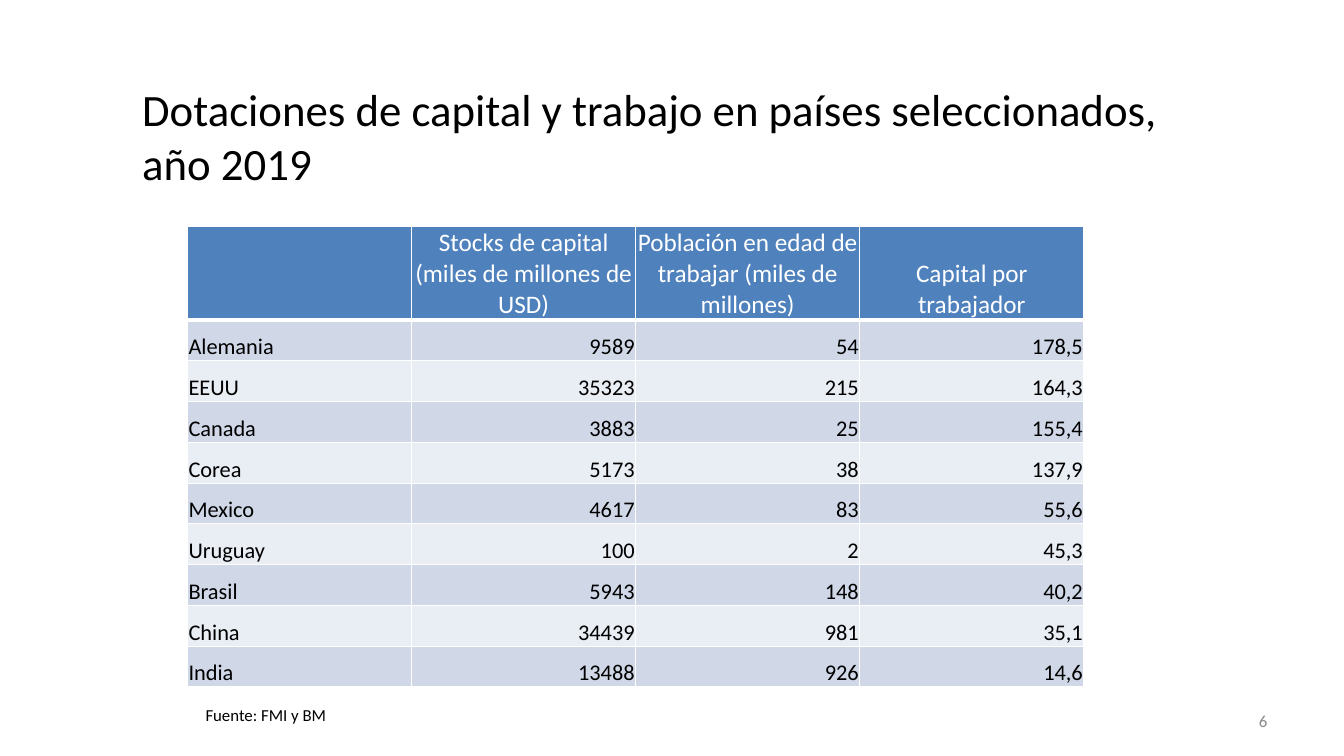
"""Build a slide with a table of capital and labour endowments by country."""
from lxml import etree
from pptx import Presentation
from pptx.dml.color import RGBColor
from pptx.enum.text import MSO_ANCHOR, MSO_AUTO_SIZE, PP_ALIGN
from pptx.oxml.ns import qn
from pptx.util import Inches, Pt

LEFT, MID, RIGHT = PP_ALIGN.LEFT, PP_ALIGN.CENTER, PP_ALIGN.RIGHT
TOP, CENTER, BASE = MSO_ANCHOR.TOP, MSO_ANCHOR.MIDDLE, MSO_ANCHOR.BOTTOM
FIXED = MSO_AUTO_SIZE.NONE

TITLE = "Dotaciones de capital y trabajo en países seleccionados, año 2019"
SOURCE = "Fuente: FMI y BM"
PAGE = "6"
HEAD = (
    "",
    "Stocks de capital (miles de millones de USD)",
    "Población en edad de trabajar (miles de millones)",
    "Capital por trabajador",
)
DATA = [
    ("Alemania", "9589", "54", "178,5"),
    ("EEUU", "35323", "215", "164,3"),
    ("Canada", "3883", "25", "155,4"),
    ("Corea", "5173", "38", "137,9"),
    ("Mexico", "4617", "83", "55,6"),
    ("Uruguay", "100", "2", "45,3"),
    ("Brasil", "5943", "148", "40,2"),
    ("China", "34439", "981", "35,1"),
    ("India", "13488", "926", "14,6"),
]

THEME = {
    "font": "Calibri",
    "ink": "000000", "white": "FFFFFF", "gray": "898989",
    "head": "4F81BD", "bands": ("D0D8E8", "E9EDF4"),
    "title": 32, "top": 18, "body": 16, "small": 12,
    "thin": 1, "thick": 3,
}
SIZE = (13.33, 7.5)
GRID = (1.86, 2.25, 8.89, 4.56)
HEAD_H = 0.92
INSETS = {"margin_left": 0.01, "margin_right": 0.01,
          "margin_top": 0.01, "margin_bottom": 0}


def put(frame, text, size, color, align):
    para = frame.paragraphs[0]
    para.alignment = align
    para.text = text
    look = {"name": THEME["font"], "size": Pt(size), "bold": False}
    for key, value in look.items():
        setattr(para.font, key, value)
    para.font.color.rgb = RGBColor.from_string(color)


def place(shape, box):
    for key, value in zip(("left", "top", "width", "height"), box):
        setattr(shape, key, Inches(value))


def write(shape, box, text, size, color, align, anchor):
    place(shape, box)
    frame = shape.text_frame
    look = {"word_wrap": True, "auto_size": FIXED, "vertical_anchor": anchor}
    for key, value in look.items():
        setattr(frame, key, value)
    put(frame, text, size, color, align)


def edge(cell, side, width):
    props = cell._tc.get_or_add_tcPr()
    line = etree.SubElement(props, qn("a:ln" + side), w=str(Pt(width)))
    fill = etree.SubElement(line, qn("a:solidFill"))
    etree.SubElement(fill, qn("a:srgbClr"), val=THEME["white"])


def dress(cell, row, col, text):
    top = row == 0
    wide = {"T": row == 1, "B": top}
    for side in "LRTB":
        edge(cell, side, THEME["thick" if wide.get(side) else "thin"])
    for key, value in INSETS.items():
        setattr(cell, key, Inches(value))
    cell.vertical_anchor = BASE
    cell.fill.solid()
    shade = THEME["head"] if top else THEME["bands"][(row - 1) % 2]
    cell.fill.fore_color.rgb = RGBColor.from_string(shade)
    align = MID if top else RIGHT if col else LEFT
    put(cell.text_frame, text, THEME["top" if top else "body"],
        THEME["white" if top else "ink"], align)


def draw(slide):
    rows = [HEAD, *DATA]
    box = [Inches(part) for part in GRID]
    table = slide.shapes.add_table(len(rows), len(HEAD), *box).table
    for col in table.columns:
        col.width = Inches(GRID[2] / len(HEAD))
    for num, row in enumerate(table.rows):
        row.height = Inches((GRID[3] - HEAD_H) / len(DATA) if num else HEAD_H)
        for col, text in enumerate(rows[num]):
            dress(table.cell(num, col), num, col, text)


def main():
    deck = Presentation()
    deck.slide_width, deck.slide_height = map(Inches, SIZE)
    slide = deck.slides.add_slide(deck.slide_layouts[5])
    small, ink = THEME["small"], THEME["ink"]
    page = slide.shapes.add_textbox(0, 0, 0, 0)
    write(page, (9.56, 6.95, 3.11, 0.4), PAGE, small, THEME["gray"],
          RIGHT, CENTER)
    draw(slide)
    write(slide.shapes.title, (1.31, 0.76, 10.71, 1.18), TITLE,
          THEME["title"], ink, LEFT, TOP)
    note = slide.shapes.add_textbox(0, 0, 0, 0)
    write(note, (1.94, 6.94, 8.5, 0.3), SOURCE, small, ink, LEFT, TOP)
    deck.save("out.pptx")


if __name__ == "__main__":
    main()
